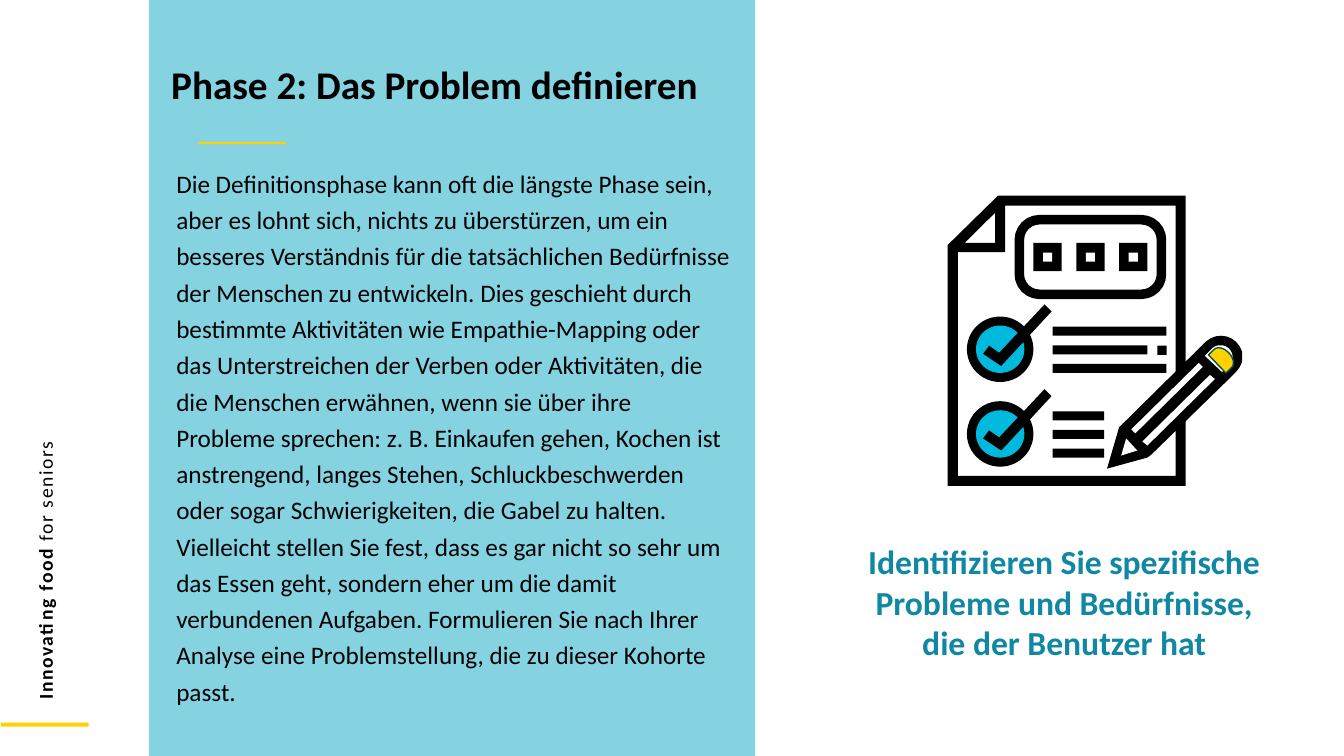
from pptx import Presentation
from pptx.dml.color import RGBColor
from pptx.enum.shapes import MSO_SHAPE
from pptx.enum.text import PP_ALIGN
from pptx.util import Inches, Pt

# Content
TITLE = "Phase 2: Das Problem definieren"
BODY = (
    "Die Definitionsphase kann oft die längste Phase sein, aber es lohnt sich, nichts zu "
    "überstürzen, um ein besseres Verständnis für die tatsächlichen Bedürfnisse der Menschen "
    "zu entwickeln. Dies geschieht durch bestimmte Aktivitäten wie Empathie-Mapping oder das "
    "Unterstreichen der Verben oder Aktivitäten, die die Menschen erwähnen, wenn sie über ihre "
    "Probleme sprechen: z. B. Einkaufen gehen, Kochen ist anstrengend, langes Stehen, "
    "Schluckbeschwerden oder sogar Schwierigkeiten, die Gabel zu halten. Vielleicht stellen Sie "
    "fest, dass es gar nicht so sehr um das Essen geht, sondern eher um die damit verbundenen "
    "Aufgaben. Formulieren Sie nach Ihrer Analyse eine Problemstellung, die zu dieser Kohorte "
    "passt."
)
CAPTION = [
    "Identifizieren Sie spezifische",
    "Probleme und Bedürfnisse,",
    "die der Benutzer hat",
]
TAGLINE = [("Innovating food ", True), ("for seniors", False)]

COLORS = {
    "panel": "85D2E1", "yellow": "FFD100", "teal": "1188A3", "check": "00BADE",
    "black": "000000", "body": "030303", "white": "FFFFFF", "eraser_line": "065151",
}

# Icon outlines: a pair is a corner, six numbers are a cubic curve
PAGE = [
    [(9.9, 1.94), (11.76, 1.94), (11.76, 4.82), (9.4, 4.82), (9.4, 2.43)],
    [(9.97, 2.04), (11.66, 2.04), (11.66, 4.72), (9.5, 4.72), (9.5, 2.5), (9.97, 2.5)],
    [(9.57, 2.41), (9.87, 2.41), (9.87, 2.11)],
]
PENCIL = [
    (10.98, 4.65), (11.1, 4.24), (11.96, 3.39),
    (12.08, 3.28, 12.27, 3.33, 12.32, 3.49), (12.32, 3.58),
    (12.31, 3.64, 12.26, 3.69, 12.22, 3.73), (11.42, 4.51), (11.38, 4.54),
]
PENCIL_GAPS = [
    [(11.89, 3.6), (11.22, 4.26), (11.26, 4.3), (11.93, 3.64)],
    [(12.05, 3.76), (12, 3.72), (11.33, 4.38), (11.38, 4.42)],
    [(12.12, 3.69), (12.2, 3.62), (12.24, 3.57, 12.23, 3.5, 12.19, 3.46),
     (12.15, 3.42, 12.08, 3.41, 12.03, 3.45), (11.95, 3.53)],
    [(11.17, 4.35), (11.12, 4.52), (11.28, 4.47)],
]
TICK = [(0.16, 0.37), (0.22, 0.29), (0.32, 0.36), (0.77, -0.12), (0.84, -0.05), (0.34, 0.49)]
CHECK_LEFT, CHECK_TOPS = 9.59, (3.14, 3.98)
BAR_LEFT, BAR_H, BAR_STEP = 10.44, 0.09, 0.185
BAR_GROUPS = [(3.24, (1.13, 0.94, 1.13)), (4.08, (0.51, 0.51, 0.51))]
SQUARE_LEFT, SQUARE_STEP = 10.25, 0.425

prs = Presentation()
prs.slide_width, prs.slide_height = Inches(13.33), Inches(7.5)
slide = prs.slides.add_slide(prs.slide_layouts[6])


def rgb(name):
    return RGBColor.from_string(COLORS[name])


def paint(sp, fill, line=None, weight=1):
    sp.shadow.inherit = False
    sp.fill.solid()
    sp.fill.fore_color.rgb = rgb(fill)
    if line:
        sp.line.color.rgb = rgb(line)
        sp.line.width = Pt(weight)
    else:
        sp.line.fill.background()
    return sp


def shape(kind, x, y, w, h, fill, line=None, weight=1):
    sp = slide.shapes.add_shape(kind, Inches(x), Inches(y), Inches(w), Inches(h))
    return paint(sp, fill, line, weight)


def flatten(outline, steps=8):
    """Turn corners and curves into points in EMU."""
    points = []
    for node in outline:
        if len(node) == 2:
            points.append(node)
            continue
        curve = [points[-1], node[:2], node[2:4], node[4:]]
        for i in range(1, steps + 1):
            t = i / steps
            weights = ((1 - t) ** 3, 3 * t * (1 - t) ** 2, 3 * t * t * (1 - t), t ** 3)
            points.append(tuple(sum(k * p[axis] for k, p in zip(weights, curve))
                                for axis in (0, 1)))
    return [(Inches(x), Inches(y)) for x, y in points]


def outline_shape(outlines, fill):
    first, *others = [flatten(outline) for outline in outlines]
    builder = slide.shapes.build_freeform(*first[0], scale=1.0)
    builder.add_line_segments(first[1:], close=True)
    for points in others:
        builder.move_to(*points[0])
        builder.add_line_segments(points[1:], close=True)
    return paint(builder.convert_to_shape(), fill)


def text(paragraphs, x, y, w, h, size, color, bold=False, align=PP_ALIGN.LEFT,
         line_spacing=None, indent=0, tracking=0, rotation=0):
    sp = slide.shapes.add_textbox(Inches(x), Inches(y), Inches(w), Inches(h))
    sp.rotation = rotation
    tf = sp.text_frame
    tf.word_wrap = True
    for i, runs in enumerate(paragraphs):
        p = tf.paragraphs[0] if i == 0 else tf.add_paragraph()
        p.alignment = align
        if line_spacing:
            p.line_spacing = line_spacing
        if indent:
            p._p.get_or_add_pPr().set("marL", str(Inches(indent)))
        for content, run_bold in ([(runs, bold)] if isinstance(runs, str) else runs):
            r = p.add_run()
            r.text = content
            r.font.name, r.font.size, r.font.bold = "Calibri", Pt(size), run_bold
            r.font.color.rgb = rgb(color)
            if tracking:
                r._r.get_or_add_rPr().set("spc", str(round(tracking * 100)))


# Panel and accent rules
shape(MSO_SHAPE.RECTANGLE, 1.48, 0, 6.01, 7.5, "panel")
shape(MSO_SHAPE.RECTANGLE, 0.01, 7.17, 0.87, 0.04, "yellow")
shape(MSO_SHAPE.RECTANGLE, 1.97, 1.41, 0.87, 0.02, "yellow")

# Texts
text([TAGLINE], -3.32, 3.1, 7.54, 0.34, 14, "black", tracking=1.1, rotation=270)
text([BODY], 1.4, 1.56, 5.98, 5.9, 18, "body", line_spacing=1.2, indent=0.25)
text([TITLE], 1.6, 0.6, 5.58, 0.9, 28, "black", bold=True, line_spacing=0.9)
text(CAPTION, 8.44, 5.32, 4.23, 1.31, 24, "teal", bold=True, align=PP_ALIGN.CENTER)

# Page with a header frame and three squares
outline_shape(PAGE, "black")
frame = shape(MSO_SHAPE.ROUNDED_RECTANGLE, 10.11, 2.18, 1.41, 0.74, "white", "black", 6.8)
frame.adjustments[0] = 0.27
for i in range(3):
    x = SQUARE_LEFT + i * SQUARE_STEP
    shape(MSO_SHAPE.RECTANGLE, x, 2.41, 0.28, 0.28, "black")
    shape(MSO_SHAPE.RECTANGLE, x + 0.095, 2.505, 0.09, 0.09, "white")

# Check marks
for top in CHECK_TOPS:
    shape(MSO_SHAPE.OVAL, CHECK_LEFT, top, 0.66, 0.65, "black")
    shape(MSO_SHAPE.OVAL, CHECK_LEFT + 0.09, top + 0.09, 0.48, 0.47, "check")
    outline_shape([[(CHECK_LEFT + x, top + y) for x, y in TICK]], "black")

# Text bars, with a dot after the short one
for top, widths in BAR_GROUPS:
    for i, width in enumerate(widths):
        shape(MSO_SHAPE.RECTANGLE, BAR_LEFT, top + i * BAR_STEP, width, BAR_H, "black")
shape(MSO_SHAPE.RECTANGLE, 11.48, 3.43, BAR_H, BAR_H, "black")

# Pencil
outline_shape([PENCIL], "black")
for gap in PENCIL_GAPS:
    outline_shape([gap], "white")
eraser = shape(MSO_SHAPE.FLOWCHART_DELAY, 12.05, 3.43, 0.16, 0.25, "yellow", "eraser_line")
eraser.rotation = 316.1

prs.save("out.pptx")
